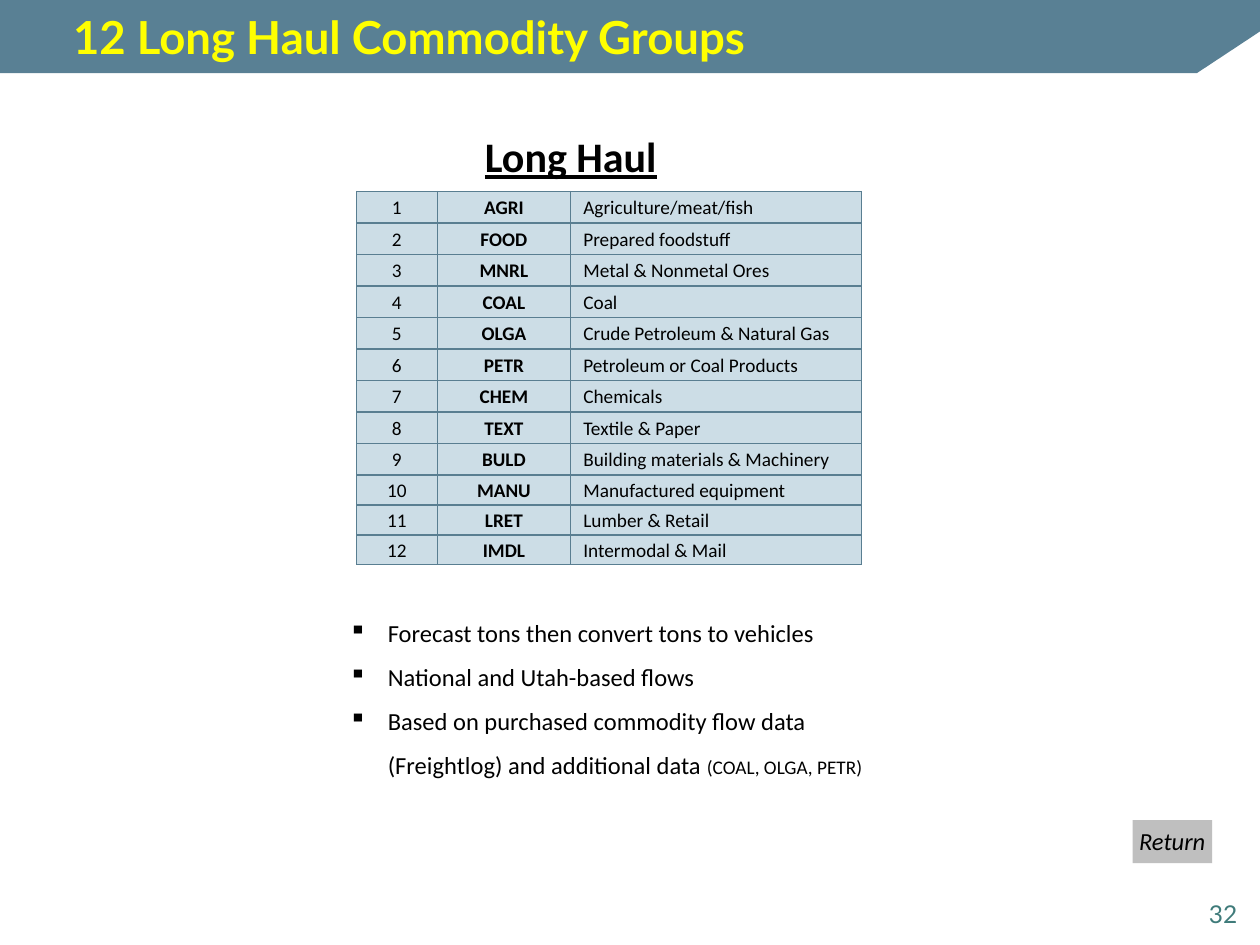
import pptx
import pptx.dml.color
import pptx.enum.shapes
import pptx.enum.text
import pptx.oxml
import pptx.oxml.ns
import pptx.util

CELL = 0.1  # inches per grid column and row
ANCHOR = pptx.enum.text.MSO_ANCHOR
ALIGN = pptx.enum.text.PP_ALIGN
COMMODITIES = [
    ("AGRI", "Agriculture/meat/fish"),
    ("FOOD", "Prepared foodstuff"),
    ("MNRL", "Metal & Nonmetal Ores"),
    ("COAL", "Coal"),
    ("OLGA", "Crude Petroleum & Natural Gas"),
    ("PETR", "Petroleum or Coal Products"),
    ("CHEM", "Chemicals"),
    ("TEXT", "Textile & Paper"),
    ("BULD", "Building materials & Machinery"),
    ("MANU", "Manufactured equipment"),
    ("LRET", "Lumber & Retail"),
    ("IMDL", "Intermodal & Mail"),
]


def color(value):
    return pptx.dml.color.RGBColor.from_string(value)


def grid(*units):
    return [pptx.util.Inches(unit * CELL) for unit in units]


def add_xml(parent, tag, content="", **attributes):
    """Append a drawing element, with its attributes and inner markup."""
    listed = "".join(f' {name}="{value}"' for name, value in attributes.items())
    namespace = pptx.oxml.ns.nsdecls("a")
    parent.append(pptx.oxml.parse_xml(f"<a:{tag} {namespace}{listed}>{content}</a:{tag}>"))


class SlideBuilder:
    """Holds the slide and its style; lengths are grid columns and rows."""

    base_format = {"name": "Calibri", "size": 14, "color": "000000"}
    border = "597E91"
    cell_fill = "CCDDE6"

    def __init__(self, presentation):
        self.slide = presentation.slides.add_slide(presentation.slide_layouts[6])

    def add_run(self, paragraph, text, **changes):
        run = paragraph.add_run()
        run.text = text
        for name, value in {**self.base_format, **changes}.items():
            if name == "color":
                run.font.color.rgb = color(value)
            else:
                setattr(run.font, name, pptx.util.Pt(value) if name == "size" else value)

    def set_frame(self, frame, insets=(1, 0.5, 1, 0.5), anchor=ANCHOR.TOP, wrap=True):
        frame.word_wrap = wrap
        frame.vertical_anchor = anchor
        for side, inset in zip(("left", "top", "right", "bottom"), grid(*insets)):
            setattr(frame, f"margin_{side}", inset)

    def text(self, box, text, align=ALIGN.LEFT, frame=None, **font):
        shape = self.slide.shapes.add_textbox(*grid(*box))
        self.set_frame(shape.text_frame, **(frame or {}))
        paragraph = shape.text_frame.paragraphs[0]
        paragraph.alignment = align
        self.add_run(paragraph, text, **font)

    def bullets(self, box, items, indent, spacing):
        """Each item is a list of (text, size) runs."""
        frame = self.slide.shapes.add_textbox(*grid(*box)).text_frame
        self.set_frame(frame)
        hanging = grid(indent)[0]
        for index, item in enumerate(items):
            paragraph = frame.add_paragraph() if index else frame.paragraphs[0]
            paragraph.line_spacing = spacing
            properties = paragraph._p.get_or_add_pPr()
            properties.set("marL", str(hanging))
            properties.set("indent", str(-hanging))
            add_xml(properties, "buChar", char="▪")
            for text, size in item:
                self.add_run(paragraph, text, size=size)

    def plain(self, shape, fill):
        shape.shadow.inherit = False
        shape.fill.solid()
        shape.fill.fore_color.rgb = color(fill)
        shape.line.fill.background()

    def banner(self, points, fill):
        start, *others = [grid(*point) for point in points]
        builder = self.slide.shapes.build_freeform(*start)
        builder.add_line_segments(others)
        self.plain(builder.convert_to_shape(), fill)

    def button(self, box, text, fill, **font):
        shape = self.slide.shapes.add_shape(
            pptx.enum.shapes.MSO_SHAPE.RECTANGLE, *grid(*box))
        self.plain(shape, fill)
        self.set_frame(shape.text_frame, insets=[0.5] * 4, wrap=False)
        paragraph = shape.text_frame.paragraphs[0]
        paragraph.alignment = ALIGN.LEFT
        self.add_run(paragraph, text, **font)

    def table_cell(self, cell, text, align, left, bold):
        cell.fill.solid()
        cell.fill.fore_color.rgb = color(self.cell_fill)
        cell.vertical_anchor = ANCHOR.MIDDLE
        cell.margin_left, cell.margin_top, cell.margin_right, cell.margin_bottom = grid(
            left, 0.1, 0.1, 0)
        paragraph = cell.text_frame.paragraphs[0]
        paragraph.alignment = align
        self.add_run(paragraph, text, size=11, bold=bold)
        properties = cell._tc.get_or_add_tcPr()
        fill = properties[0]
        line = f'<a:solidFill><a:srgbClr val="{self.border}"/></a:solidFill>'
        for edge in ("lnL", "lnR", "lnT", "lnB"):
            add_xml(properties, edge, line, w=pptx.util.Pt(0.75))
        properties.append(fill)  # the fill must follow the borders

    def table(self, left, top, widths, heights, rows, styles):
        """Each style is (alignment, left inset, bold) for one column."""
        table = self.slide.shapes.add_table(
            len(rows), len(widths), *grid(left, top, sum(widths), sum(heights))).table
        table.first_row = table.horz_banding = False
        for column, width in zip(table.columns, grid(*widths)):
            column.width = width
        for row, height, values in zip(table.rows, grid(*heights), rows):
            row.height = height
            for cell, value, style in zip(row.cells, values, styles):
                self.table_cell(cell, value, *style)


def main():
    presentation = pptx.Presentation()
    presentation.slide_width, presentation.slide_height = grid(100, 75)
    builder = SlideBuilder(presentation)

    builder.banner([(0, 5.8), (95, 5.8), (100, 2.5), (100, 0), (0, 0), (0, 5.8)], "598094")
    builder.text((5.8, 0, 90, 5.8), "12 Long Haul Commodity Groups",
                 frame={"insets": (0, 0.5, 1, 0.5), "anchor": ANCHOR.MIDDLE},
                 name="Lato", size=26, color="FFFF00", bold=True)
    builder.text((37.5, 9.9, 15.8, 5), "Long Haul", frame={"wrap": False},
                 size=24, bold=True, underline=True)
    rows = [(str(number), *names) for number, names in enumerate(COMMODITIES, 1)]
    builder.table(28.3, 15.2, (6.4, 10.6, 23.1), [2.5] * 9 + [2.38] * 3, rows,
                  [(ALIGN.CENTER, 0.1, False), (ALIGN.CENTER, 0.1, True),
                   (ALIGN.LEFT, 1, False)])
    builder.bullets((26.7, 47.4, 46.7, 15.1), [
        [("Forecast tons then convert tons to vehicles", 14)],
        [("National and Utah-based flows", 14)],
        [("Based on purchased commodity flow data (Freightlog) and additional data ", 14),
         ("(COAL, OLGA, PETR)", 11)],
    ], indent=3.1, spacing=1.5)
    builder.text((90.7, 69.2, 7.5, 5), "32", align=ALIGN.RIGHT,
                 frame={"insets": (1, 0.5, 0, 0.5), "anchor": ANCHOR.BOTTOM},
                 name="Lato", color="3F7B7A")
    builder.button((89.9, 65.1, 6.3, 3.4), "Return", "BFBFBF", italic=True)

    presentation.save("out.pptx")


if __name__ == "__main__":
    main()
